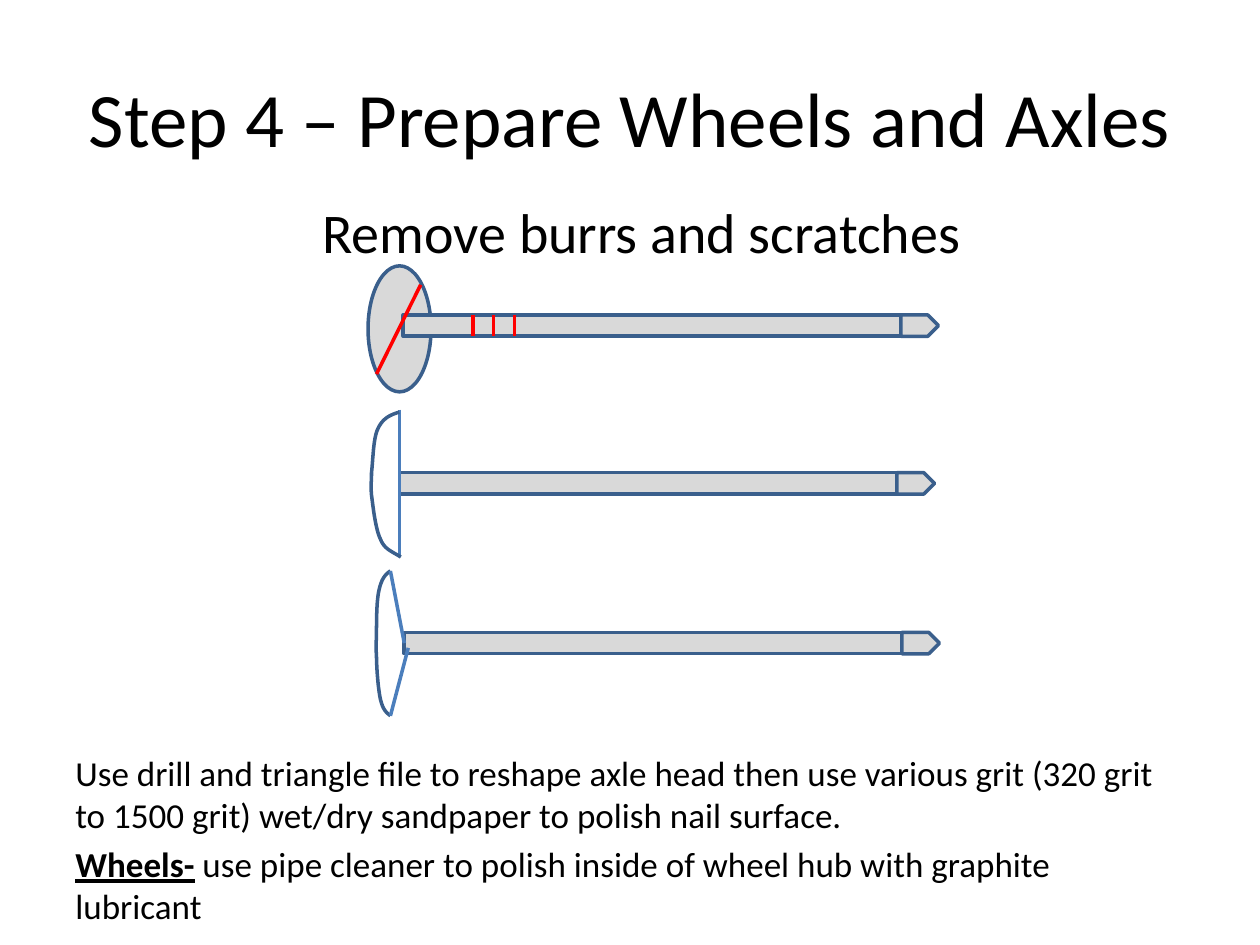
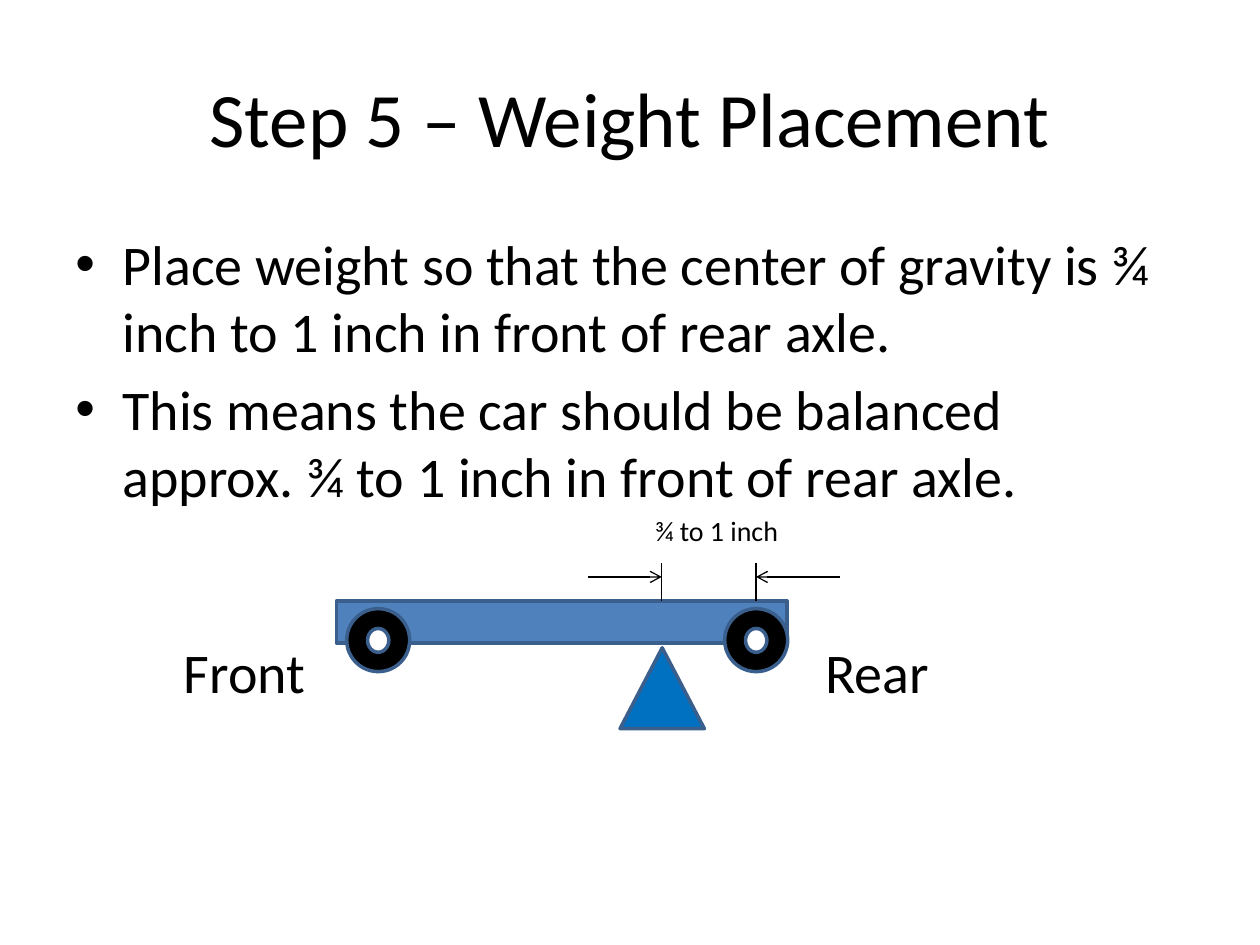
"""Builds two car workshop slides: axle preparation and weight placement."""
from itertools import chain
from typing import Any, NamedTuple, Optional

from lxml.etree import SubElement
from pptx import Presentation
from pptx.dml.color import RGBColor
from pptx.enum.shapes import MSO_CONNECTOR, MSO_SHAPE
from pptx.enum.text import MSO_ANCHOR, PP_ALIGN
from pptx.oxml.ns import qn
from pptx.util import Cm, Pt

FONT = "Calibri"
BLACK = "000000"
WHITE = "FFFFFF"
STEEL = "D9D9D9"
OUTLINE = "3A5F8C"
FACE = "4B7EBC"
SCRATCH = "FF0000"
DECK = "4F81BD"
FULCRUM = "0070C0"
HEAVY, THIN = 2, 0.75

AXLE_LENGTH, AXLE_HEIGHT = 10.16, 0.43
TIP_OFFSET, TIP_LENGTH = 10.03, 0.76
BULLET_INDENT = 0.95
CURVE_STEPS = 12


class Run(NamedTuple):
    text: str
    style: dict[str, Any] = {}


class TextBlock(NamedTuple):
    left: float
    top: float
    width: float
    height: float
    size: int
    paragraphs: list[list[Run]]
    bulleted: bool = False


class Part(NamedTuple):
    kind: MSO_SHAPE
    left: float
    top: float
    width: float
    height: float
    fill: str


class Stroke(NamedTuple):
    start: tuple[float, float]
    end: tuple[float, float]
    color: str
    weight: float = HEAVY
    arrow: bool = False


Curve = list[tuple[float, float]]

FLAT_HEAD: Curve = [
    (8.05, 8.31),
    (7.87, 8.36), (7.72, 8.43), (7.62, 8.64),
    (7.52, 8.84), (7.52, 9.3), (7.49, 9.53),
    (7.49, 9.75), (7.47, 9.75), (7.49, 9.98),
    (7.52, 10.21), (7.57, 10.67), (7.67, 10.87),
    (7.75, 11.07), (7.87, 11.1), (8.08, 11.23),
]
TAPERED_HEAD: Curve = [
    (7.87, 11.51),
    (7.77, 11.58), (7.7, 11.66), (7.65, 11.86),
    (7.59, 12.07), (7.59, 12.52), (7.59, 12.75),
    (7.59, 12.95), (7.57, 12.98), (7.59, 13.21),
    (7.59, 13.44), (7.62, 13.87), (7.67, 14.1),
    (7.72, 14.3), (7.77, 14.35), (7.87, 14.43),
]


def rgb(color: str) -> RGBColor:
    """Turn a hex string into a colour."""
    return RGBColor.from_string(color)


def apply(target: Any, values: dict[str, Any]) -> None:
    """Set each named value on the target."""
    for name, value in values.items():
        setattr(target, name, value)


def write_run(paragraph: Any, run: Run, size: int) -> None:
    """Append a formatted run to a paragraph."""
    text_run = paragraph.add_run()
    text_run.text = run.text
    apply(text_run.font, {"name": FONT, "size": Pt(size), **run.style})
    text_run.font.color.rgb = rgb(BLACK)


def add_bullet(paragraph: Any) -> None:
    """Give a paragraph a hanging bullet."""
    properties = paragraph._p.get_or_add_pPr()
    properties.set("marL", str(Cm(BULLET_INDENT)))
    properties.set("indent", str(-Cm(BULLET_INDENT)))
    SubElement(properties, qn("a:buFont")).set("typeface", "Arial")
    SubElement(properties, qn("a:buChar")).set("char", "•")


def add_text(slide: Any, block: TextBlock) -> None:
    """Draw a text box with its paragraphs."""
    box = slide.shapes.add_textbox(
        Cm(block.left), Cm(block.top), Cm(block.width), Cm(block.height))
    frame = box.text_frame
    apply(frame, {"word_wrap": True, "margin_left": 0, "margin_right": 0,
                  "margin_top": 0, "margin_bottom": 0})
    for index, runs in enumerate(block.paragraphs):
        paragraph = frame.add_paragraph() if index else frame.paragraphs[0]
        if index:
            paragraph.space_before = Pt(block.size * 0.2)
        if block.bulleted:
            add_bullet(paragraph)
        for run in runs:
            write_run(paragraph, run, block.size)


def add_part(slide: Any, part: Part) -> Any:
    """Draw a filled and outlined preset shape."""
    shape = slide.shapes.add_shape(
        part.kind, Cm(part.left), Cm(part.top), Cm(part.width), Cm(part.height))
    shape.shadow.inherit = False
    shape.fill.solid()
    shape.fill.fore_color.rgb = rgb(part.fill)
    shape.line.color.rgb = rgb(OUTLINE)
    shape.line.width = Pt(HEAVY)
    return shape


def add_stroke(slide: Any, stroke: Stroke, origin: Optional[Any] = None) -> None:
    """Draw a straight line, starting at the left side of origin if given."""
    connector = slide.shapes.add_connector(
        MSO_CONNECTOR.STRAIGHT, *map(Cm, stroke.start + stroke.end))
    if origin is not None:
        connector.begin_connect(origin, 1)
    connector.line.color.rgb = rgb(stroke.color)
    connector.line.width = Pt(stroke.weight)
    properties = connector._element.spPr
    if stroke.arrow:
        SubElement(properties.find(qn("a:ln")), qn("a:tailEnd")).set("type", "arrow")
    SubElement(properties, qn("a:effectLst"))


def bezier(points: Curve, t: float) -> tuple[int, int]:
    """Return the point at t on a cubic curve with four control points."""
    weights = ((1 - t) ** 3, 3 * t * (1 - t) ** 2, 3 * t ** 2 * (1 - t), t ** 3)
    x, y = (sum(w * p[axis] for w, p in zip(weights, points)) for axis in (0, 1))
    return Cm(x), Cm(y)


def add_head(slide: Any, curve: Curve) -> None:
    """Draw the rounded outline of a nail head."""
    segments = [curve[i:i + 4] for i in range(0, len(curve) - 1, 3)]
    points = chain.from_iterable(
        [bezier(segment, step / CURVE_STEPS) for step in range(1, CURVE_STEPS + 1)]
        for segment in segments)
    builder = slide.shapes.build_freeform(*map(Cm, curve[0]))
    builder.add_line_segments(list(points), close=False)
    outline = builder.convert_to_shape()
    outline.shadow.inherit = False
    outline.fill.background()
    outline.line.color.rgb = rgb(OUTLINE)
    outline.line.width = Pt(HEAVY)


def add_axle(slide: Any, left: float, top: float) -> Any:
    """Draw an axle with its pointed tip and return the rod."""
    rod = add_part(slide, Part(
        MSO_SHAPE.RECTANGLE, left, top, AXLE_LENGTH, AXLE_HEIGHT, STEEL))
    add_part(slide, Part(
        MSO_SHAPE.PENTAGON, left + TIP_OFFSET, top, TIP_LENGTH, AXLE_HEIGHT, STEEL))
    return rod


def add_titled_slide(presentation: Any, text: str) -> Any:
    """Add a title-only slide and format its title."""
    slide = presentation.slides.add_slide(presentation.slide_layouts[5])
    title = slide.shapes.title
    apply(title, {"left": Cm(1.27), "top": Cm(0.76),
                  "width": Cm(22.86), "height": Cm(3.18)})
    title.text_frame.vertical_anchor = MSO_ANCHOR.MIDDLE
    paragraph = title.text_frame.paragraphs[0]
    paragraph.alignment = PP_ALIGN.CENTER
    write_run(paragraph, Run(text), 44)
    return slide


def build_axles_slide(presentation: Any) -> None:
    """Build the slide on wheels and axles."""
    slide = add_titled_slide(presentation, "Step 4 – Prepare Wheels and Axles")
    add_text(slide, TextBlock(6.5, 3.99, 16, 1.4, 32, [
        [Run("Remove burrs and scratches")]]))
    add_text(slide, TextBlock(1.52, 15.15, 22.35, 3.6, 20, [
        [Run("Use drill and triangle file to reshape axle head then use various grit "
             "(320 grit to 1500 grit) wet/dry sandpaper to polish nail surface.")],
        [Run("Wheels-", {"bold": True, "underline": True}),
         Run(" use pipe cleaner to polish inside of wheel hub with graphite lubricant")],
    ]))

    add_part(slide, Part(MSO_SHAPE.OVAL, 7.42, 5.36, 1.27, 2.54, STEEL))
    scratched_top = 6.35
    add_axle(slide, 8.13, scratched_top)
    for index in range(3):
        x = 9.53 + 0.42 * index
        add_stroke(slide, Stroke(
            (x, scratched_top), (x, scratched_top + AXLE_HEIGHT), SCRATCH))
    add_stroke(slide, Stroke((8.48, 5.74), (7.59, 7.54), SCRATCH))

    add_axle(slide, 8.05, 9.53)
    add_stroke(slide, Stroke((8.05, 8.26), (8.05, 11.23), FACE))
    add_head(slide, FLAT_HEAD)

    tapered_rod = add_axle(slide, 8.15, 12.75)
    add_head(slide, TAPERED_HEAD)
    add_stroke(slide, Stroke((8.15, 12.96), (7.87, 11.51), FACE), tapered_rod)
    add_stroke(slide, Stroke((8.23, 13.06), (7.87, 14.43), FACE))


def build_weight_slide(presentation: Any) -> None:
    """Build the slide on weight placement."""
    slide = add_titled_slide(presentation, "Step 5 – Weight Placement")
    blocks = [
        TextBlock(1.52, 4.62, 22.35, 5.6, 32, [
            [Run("Place weight so that the center of gravity is ¾ inch to 1 inch "
                 "in front of rear axle.")],
            [Run("This means the car should be balanced approx. ¾ to 1 inch "
                 "in front of rear axle.")],
        ], bulleted=True),
        TextBlock(13.2, 10.36, 4, 0.7, 16, [[Run("¾ to 1 inch")]]),
        TextBlock(3.71, 12.85, 3, 1.4, 32, [[Run("Front")]]),
        TextBlock(16.64, 12.85, 3, 1.4, 32, [[Run("Rear")]]),
    ]
    for block in blocks:
        add_text(slide, block)

    deck_top = 12.12
    add_part(slide, Part(MSO_SHAPE.RECTANGLE, 6.78, deck_top, 9.09, 0.84, DECK))
    for left in (14.61, 6.99):
        add_part(slide, Part(MSO_SHAPE.OVAL, left, 12.27, 1.27, 1.27, BLACK))
        add_part(slide, Part(MSO_SHAPE.OVAL, left + 0.42, 12.67, 0.43, 0.48, WHITE))
    add_part(slide, Part(
        MSO_SHAPE.ISOSCELES_TRIANGLE, 12.5, 13.06, 1.7, 1.63, FULCRUM))

    arrow_y = 11.63
    for mark, arrow_start in ((13.34, 11.86), (15.24, 16.94)):
        add_stroke(slide, Stroke((mark, 11.35), (mark, deck_top), BLACK, THIN))
        add_stroke(slide, Stroke(
            (arrow_start, arrow_y), (mark, arrow_y), BLACK, THIN, arrow=True))


def main() -> None:
    """Build and save the presentation."""
    presentation = Presentation()
    apply(presentation, {"slide_width": Cm(25.4), "slide_height": Cm(19.05)})
    build_axles_slide(presentation)
    build_weight_slide(presentation)
    presentation.save("out.pptx")


if __name__ == "__main__":
    main()
